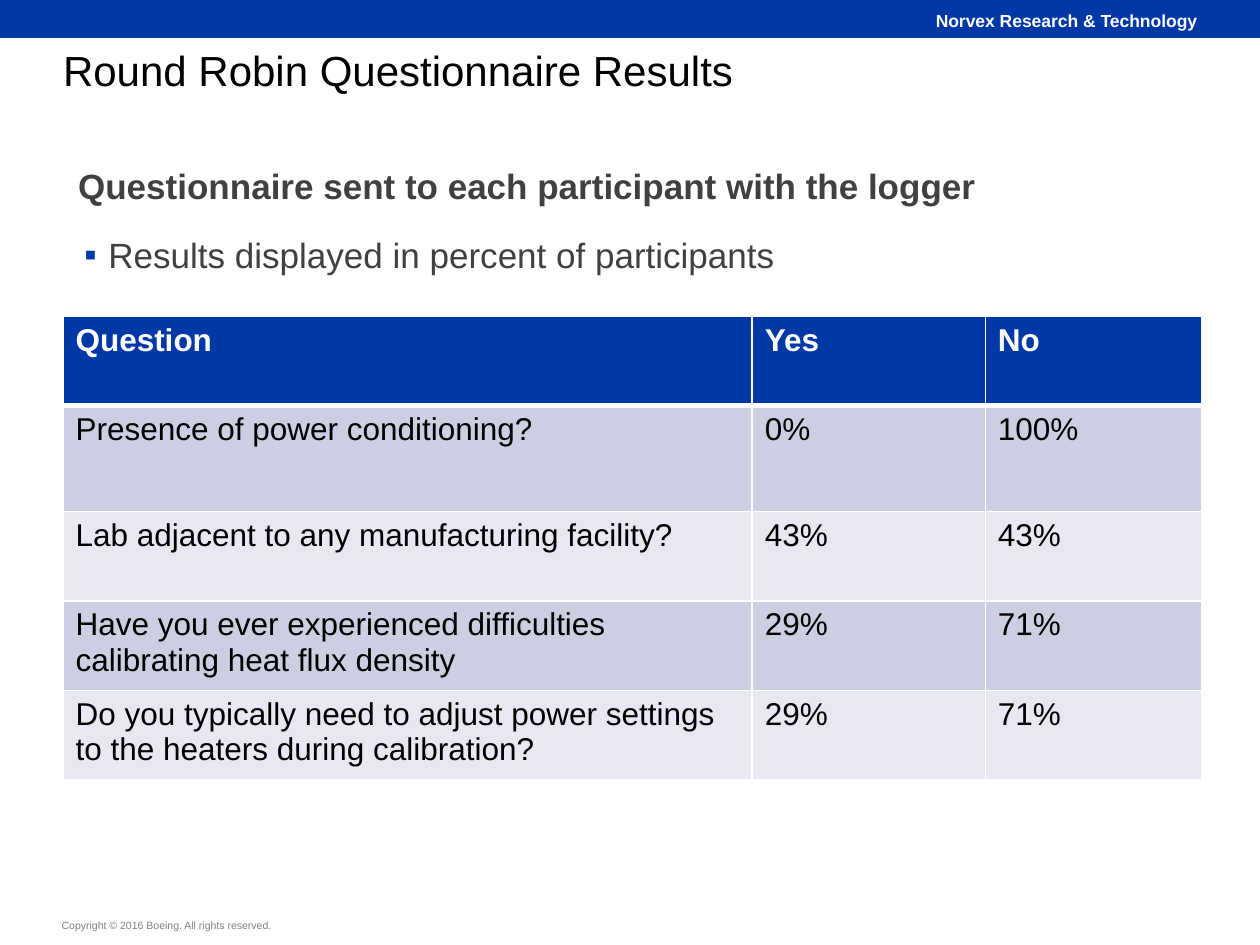
from lxml import etree
from pptx import Presentation
from pptx.dml.color import RGBColor
from pptx.enum import shapes, text
from pptx.oxml import ns
from pptx.util import Inches, Pt

BLUE = RGBColor(0x00, 0x39, 0xA6)
WHITE = RGBColor(0xFF, 0xFF, 0xFF)
BLACK = RGBColor(0x00, 0x00, 0x00)
DARK = RGBColor(0x40, 0x40, 0x40)
GREY = RGBColor(0x80, 0x80, 0x80)
BANDS = (RGBColor(0xCC, 0xCE, 0xE1), RGBColor(0xE7, 0xE8, 0xF1))

ROWS = (
    ("Question", "Yes", "No"),
    ("Presence of power conditioning?", "0%", "100%"),
    ("Lab adjacent to any manufacturing facility?", "43%", "43%"),
    ("Have you ever experienced difficulties calibrating heat flux density", "29%", "71%"),
    ("Do you typically need to adjust power settings to the heaters during calibration?", "29%", "71%"),
)
WIDTHS = (5.47, 1.85, 1.72)
HEIGHTS = (0.71, 0.84, 0.71, 0.71, 0.71)


def add(parent, tag, **attrs):
    return etree.SubElement(parent, ns.qn(tag), attrs)


def write(para, words, size=18, color=BLACK, bold=False,
          align=text.PP_ALIGN.LEFT, line=None, before=0):
    para.text = words
    para.alignment = align
    para.line_spacing = line
    para.space_before = Pt(before)
    font = para.font
    font.name = "Arial"
    font.size = Pt(size)
    font.bold = bold
    font.color.rgb = color


def place(shape, left, top, width, height):
    shape.left, shape.top = Inches(left), Inches(top)
    shape.width, shape.height = Inches(width), Inches(height)


def setup(frame, inset=0, top=None, anchor=text.MSO_ANCHOR.TOP):
    frame.word_wrap = True
    frame.auto_size = text.MSO_AUTO_SIZE.NONE
    frame.vertical_anchor = anchor
    frame.margin_left = frame.margin_right = frame.margin_bottom = Inches(inset)
    frame.margin_top = Inches(inset if top is None else top)


def label(slide, box, words, inset=0, anchor=text.MSO_ANCHOR.TOP, **style):
    frame = slide.shapes.add_textbox(*map(Inches, box)).text_frame
    setup(frame, inset, anchor=anchor)
    write(frame.paragraphs[0], words, **style)


def bullet(para, mark, left, indent):
    props = para._p.get_or_add_pPr()
    props.set("marL", str(Inches(left)))
    props.set("indent", str(Inches(indent)))
    if mark:
        add(add(props, "a:buClr"), "a:srgbClr", val=str(BLUE))
        add(props, "a:buFont", typeface="Arial")
        add(props, "a:buChar", char=mark)
    else:
        add(props, "a:buNone")


def border(cell, base):
    props = cell._tc.get_or_add_tcPr()
    for side, width in (("L", 1), ("R", 1), ("T", 1), ("B", base)):
        line = add(props, "a:ln" + side, w=str(Pt(width)))
        add(add(line, "a:solidFill"), "a:srgbClr", val=str(WHITE))


def banner(slide):
    bar = slide.shapes.add_shape(shapes.MSO_SHAPE.RECTANGLE,
                                 0, Inches(-0.01), Inches(10), Inches(0.31))
    bar.shadow.inherit = False
    bar.fill.solid()
    bar.fill.fore_color.rgb = BLUE
    bar.line.fill.background()
    label(slide, (4.01, 0.08, 5.49, 0.17), "Norvex Research & Technology",
          size=10, color=WHITE, bold=True, align=text.PP_ALIGN.RIGHT)


def heading(slide):
    title = slide.shapes.title
    place(title, 0.5, 0.35, 9, 0.41)
    setup(title.text_frame, top=0.05)
    write(title.text_frame.paragraphs[0], "Round Robin Questionnaire Results",
          size=24, line=0.9)


def body(slide):
    holder = slide.placeholders[1]
    place(holder, 0.54, 1.34, 9, 1.1)
    frame = holder.text_frame
    setup(frame)
    lead = frame.paragraphs[0]
    bullet(lead, None, 0.08, 0)
    write(lead, "Questionnaire sent to each participant with the logger",
          size=20, color=DARK, bold=True, line=0.9)
    item = frame.add_paragraph()
    item.level = 1
    bullet(item, "▪", 0.32, -0.19)
    write(item, "Results displayed in percent of participants",
          size=20, color=DARK, line=0.9, before=18)


def grid(slide):
    table = slide.shapes.add_table(
        len(ROWS), len(WIDTHS), Inches(0.5), Inches(2.51),
        Inches(sum(WIDTHS)), Inches(sum(HEIGHTS))).table
    for col, width in zip(table.columns, WIDTHS):
        col.width = Inches(width)
    for r, (row, height) in enumerate(zip(ROWS, HEIGHTS)):
        table.rows[r].height = Inches(height)
        head = r == 0
        for c, words in enumerate(row):
            cell = table.cell(r, c)
            border(cell, 3 if head else 1)
            cell.fill.solid()
            cell.fill.fore_color.rgb = BLUE if head else BANDS[(r - 1) % 2]
            write(cell.text_frame.paragraphs[0], words,
                  color=WHITE if head else BLACK, bold=head)


def main():
    deck = Presentation()
    deck.slide_width, deck.slide_height = Inches(10), Inches(7.5)
    slide = deck.slides.add_slide(deck.slide_layouts[1])
    banner(slide)
    heading(slide)
    body(slide)
    grid(slide)
    label(slide, (0.48, 7.28, 2.26, 0.12),
          "Copyright © 2016 Boeing. All rights reserved.",
          inset=0.01, anchor=text.MSO_ANCHOR.BOTTOM, size=6, color=GREY)
    deck.save("out.pptx")


if __name__ == "__main__":
    main()
